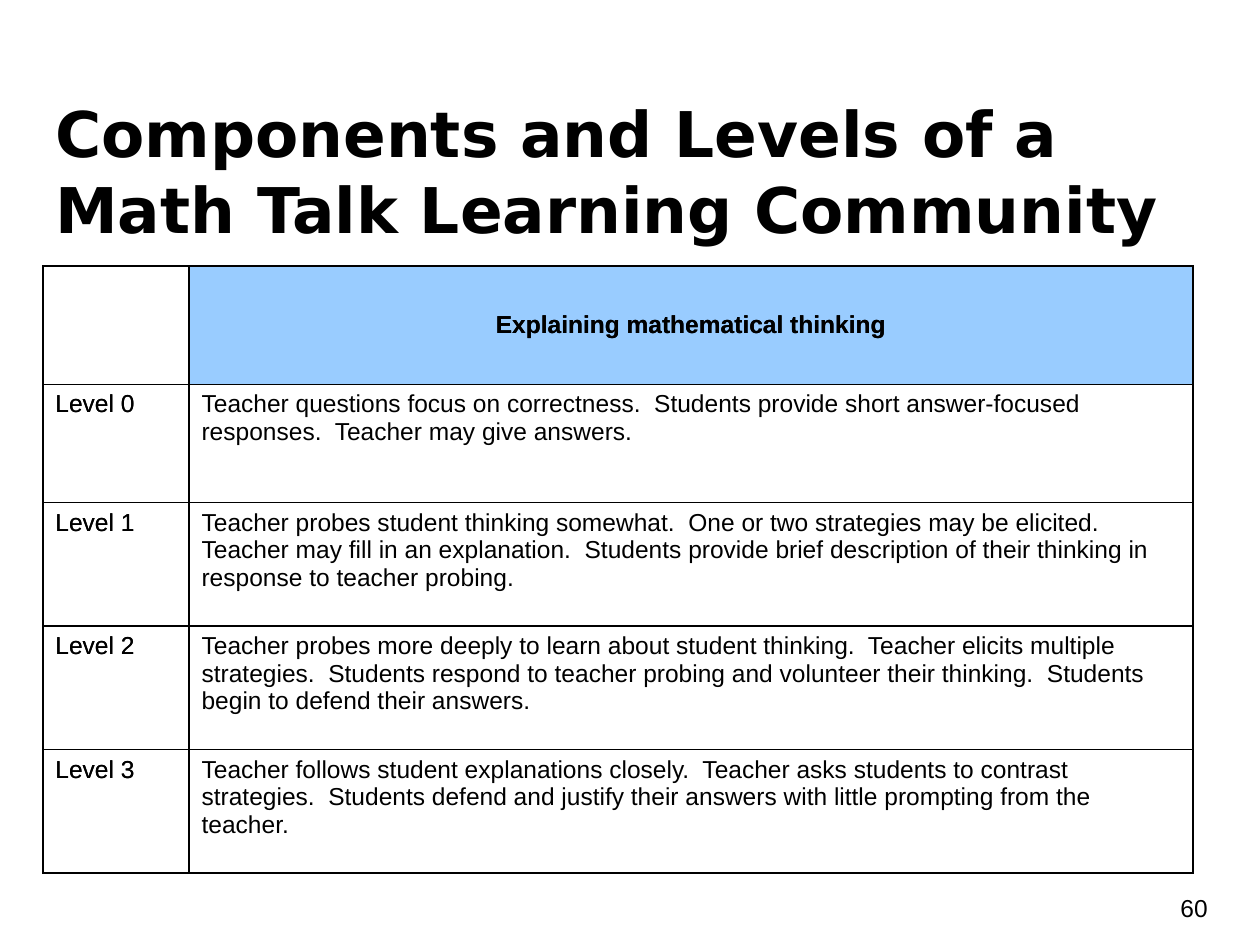
from lxml import etree
from pptx import Presentation
from pptx import util as u
from pptx.dml.color import RGBColor
from pptx.enum import text
from pptx.oxml.ns import qn

BLACK = "000000"
HEADING = "Explaining mathematical thinking"
LEVELS = [
    "Teacher questions focus on correctness.  Students provide short answer-focused "
    "responses.  Teacher may give answers.",
    "Teacher probes student thinking somewhat.  One or two strategies may be elicited.  "
    "Teacher may fill in an explanation.  Students provide brief description of their "
    "thinking in response to teacher probing.",
    "Teacher probes more deeply to learn about student thinking.  Teacher elicits multiple "
    "strategies.  Students respond to teacher probing and volunteer their thinking.  "
    "Students begin to defend their answers.",
    "Teacher follows student explanations closely.  Teacher asks students to contrast "
    "strategies.  Students defend and justify their answers with little prompting from "
    "the teacher.",
]
COLUMN_WIDTHS = [1.16, 7.97]
ROW_HEIGHTS = [0.94, 0.94, 0.98, 0.98, 0.98]


def color(value):
    return RGBColor.from_string(value)


def write(frame, words, size=14, font="Arial", bold=False):
    para = frame.paragraphs[0]
    para.text = words
    para.font.size = u.Pt(size)
    para.font.name = font
    para.font.bold = bold
    para.font.color.rgb = color(BLACK)
    return para


def add_text(page, words, left, top, width, height, anchor, **style):
    box = page.shapes.add_textbox(*map(u.Inches, (left, top, width, height)))
    frame = box.text_frame
    frame.word_wrap = True
    frame.vertical_anchor = anchor
    frame.margin_left = frame.margin_right = u.Inches(0.1)
    frame.margin_top = frame.margin_bottom = u.Inches(0.1)
    write(frame, words, **style)


def add_borders(cell):
    properties = cell._tc.get_or_add_tcPr()
    for position, side in enumerate(("lnL", "lnR", "lnT", "lnB")):
        line = etree.Element(qn(f"a:{side}"), w=str(u.Pt(1)))
        fill = etree.SubElement(line, qn("a:solidFill"))
        etree.SubElement(fill, qn("a:srgbClr"), val=BLACK)
        properties.insert(position, line)


def add_levels_table(page, descriptions, heading_fill=None):
    """Add one layer of the table; unfilled cells let the layer below show."""
    table = page.shapes.add_table(
        len(ROW_HEIGHTS), len(COLUMN_WIDTHS), u.Inches(0.34), u.Inches(2.11),
        u.Inches(sum(COLUMN_WIDTHS)), u.Inches(sum(ROW_HEIGHTS))).table
    for column, width in zip(table.columns, COLUMN_WIDTHS):
        column.width = u.Inches(width)
    for row, height in zip(table.rows, ROW_HEIGHTS):
        row.height = u.Inches(height)
    for cell in table.iter_cells():
        cell.fill.background()
        add_borders(cell)

    heading = table.cell(0, 1)
    heading.vertical_anchor = text.MSO_ANCHOR.MIDDLE
    write(heading.text_frame, HEADING, bold=True).alignment = text.PP_ALIGN.CENTER
    if heading_fill:
        heading.fill.solid()
        heading.fill.fore_color.rgb = color(heading_fill)
    for level, description in enumerate(descriptions):
        write(table.cell(level + 1, 0).text_frame, f"Level {level}")
        write(table.cell(level + 1, 1).text_frame, description)


def main():
    deck = Presentation()
    deck.slide_width, deck.slide_height = u.Inches(10), u.Inches(7.5)
    page = deck.slides.add_slide(deck.slide_layouts[6])
    add_text(page, "Components and Levels of a Math Talk Learning Community",
             0.34, 0.65, 9.32, 0.84, text.MSO_ANCHOR.TOP,
             size=36, font="DejaVu Sans", bold=True)
    add_text(page, "60", 9.27, 6.92, 0.6, 0.57, text.MSO_ANCHOR.MIDDLE)
    add_levels_table(page, [""] * len(LEVELS), heading_fill="99CCFF")
    add_levels_table(page, LEVELS)
    deck.save("out.pptx")


if __name__ == "__main__":
    main()
